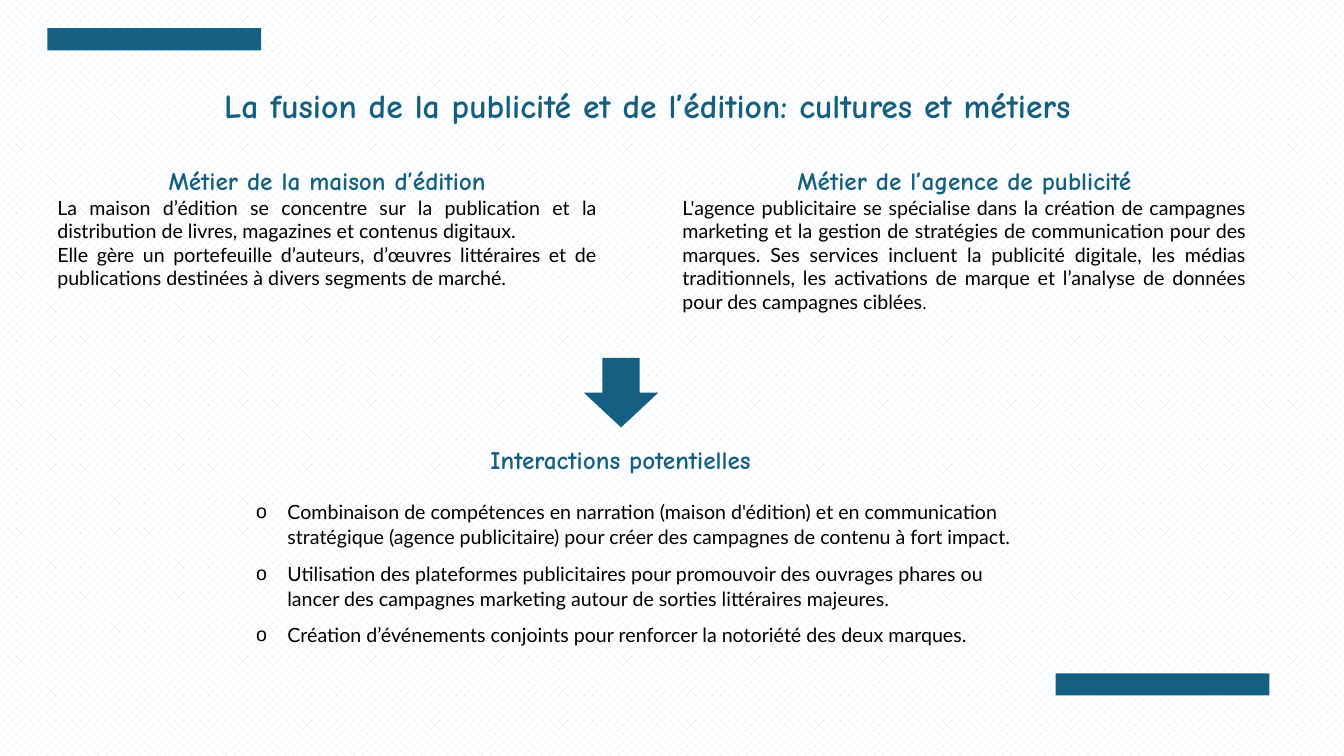
"""Build the slide on merging an advertising agency with a publishing house."""
from lxml.etree import SubElement
from pptx import Presentation
from pptx.dml.color import RGBColor
from pptx.enum.dml import MSO_PATTERN
from pptx.enum.shapes import MSO_SHAPE
from pptx.enum.text import MSO_ANCHOR, MSO_AUTO_SIZE, PP_ALIGN as ALIGN
from pptx.oxml.ns import qn
from pptx.util import Inches, Pt

BLUE, BLACK, PALE, WHITE = "156082", "000000", "DCEAF7", "FFFFFF"
TITLE = "La fusion de la publicité et de l’édition: cultures et métiers"
TRADES = [
    ((0.47, 1.59, 5.55, 1.55), "Métier de la maison d’édition", [
        [("La maison d’édition se concentre sur la publication et la distribution "
          "de livres, magazines et contenus digitaux.", 14)],
        [("Elle gère un portefeuille d’auteurs, d’œuvres littéraires et de "
          "publications destinées à divers segments de marché.", 14)],
    ]),
    ((6.67, 1.59, 5.79, 1.78), "Métier de l’agence de publicité", [
        [("L'agence publicitaire se spécialise dans la création de campagnes "
          "marketing et la gestion de stratégies de communication pour des marques. "
          "Ses services incluent la publicité digitale, les médias traditionnels, "
          "les activations de marque et l’analyse de données pour des campagnes "
          "ciblées", 14), (".", 12)],
    ]),
]
INTERACTIONS_HEADING = "Interactions potentielles"
INTERACTIONS = [
    "Combinaison de compétences en narration (maison d'édition) et en communication "
    "stratégique (agence publicitaire) pour créer des campagnes de contenu à fort impact.",
    "Utilisation des plateformes publicitaires pour promouvoir des ouvrages phares ou "
    "lancer des campagnes marketing autour de sorties littéraires majeures.",
    "Création d’événements conjoints pour renforcer la notoriété des deux marques.",
]
BLUE_SHAPES = [
    (MSO_SHAPE.RECTANGLE, (0.47, 0.28, 2.12, 0.22)),
    (MSO_SHAPE.RECTANGLE, (10.47, 6.68, 2.12, 0.22)),
    (MSO_SHAPE.DOWN_ARROW, (5.79, 3.55, 0.74, 0.69)),
]
HEADING = {"font": "Comic Neue", "color": BLUE, "bold": True, "align": ALIGN.CENTER}


def rgb(value):
    return RGBColor.from_string(value)


def place(shape, box):
    shape.left, shape.top, shape.width, shape.height = map(Inches, box)


def prepare_frame(shape, anchor=MSO_ANCHOR.TOP):
    frame = shape.text_frame
    frame.word_wrap = True
    frame.auto_size = MSO_AUTO_SIZE.NONE
    frame.vertical_anchor = anchor
    return frame


def add_text(frame, runs, size=14, font="Lato", color=BLACK, bold=False,
             align=ALIGN.LEFT, spacing=1.0, after=0, bullet=None):
    first = frame.paragraphs[0]
    paragraph = frame.add_paragraph() if first.runs else first
    paragraph.alignment = align
    paragraph.line_spacing = spacing
    paragraph.space_before, paragraph.space_after = Pt(0), Pt(after)
    for text, run_size in [(runs, size)] if isinstance(runs, str) else runs:
        run = paragraph.add_run()
        run.text = text
        run.font.size, run.font.name, run.font.bold = Pt(run_size), font, bold
        run.font.color.rgb = rgb(color)
    properties = paragraph._p.get_or_add_pPr()
    properties.set("marL", str(Inches(0.81 if bullet else 0)))
    properties.set("indent", str(Inches(-0.31 if bullet else 0)))
    if bullet:
        SubElement(properties, qn("a:buChar"), char=bullet)
    else:
        SubElement(properties, qn("a:buNone"))


def main():
    presentation = Presentation()
    presentation.slide_width, presentation.slide_height = Inches(13.33), Inches(7.5)
    slide = presentation.slides.add_slide(presentation.slide_layouts[1])
    background = slide.background.fill
    background.patterned()
    background.pattern = MSO_PATTERN.from_xml("pct40")
    background.fore_color.rgb, background.back_color.rgb = rgb(PALE), rgb(WHITE)

    title, interactions = slide.placeholders
    place(title, (0.47, 0.73, 11.9, 0.59))
    add_text(prepare_frame(title, MSO_ANCHOR.MIDDLE), TITLE, size=24, spacing=1.07, **HEADING)

    for preset, box in BLUE_SHAPES:
        shape = slide.shapes.add_shape(preset, *map(Inches, box))
        shape.shadow.inherit = False
        shape.fill.solid()
        shape.fill.fore_color.rgb = rgb(BLUE)
        shape.line.fill.background()

    for box, heading, paragraphs in TRADES:
        frame = prepare_frame(slide.shapes.add_textbox(*map(Inches, box)))
        add_text(frame, heading, size=18, **HEADING)
        for runs in paragraphs:
            add_text(frame, runs, align=ALIGN.JUSTIFY)

    place(interactions, (1.94, 4.36, 8.43, 2.44))
    frame = prepare_frame(interactions)
    add_text(frame, INTERACTIONS_HEADING, size=18, after=17, **HEADING)
    for text in INTERACTIONS:
        add_text(frame, text, spacing=1.07, after=8, bullet="o")

    presentation.save("out.pptx")


if __name__ == "__main__":
    main()
